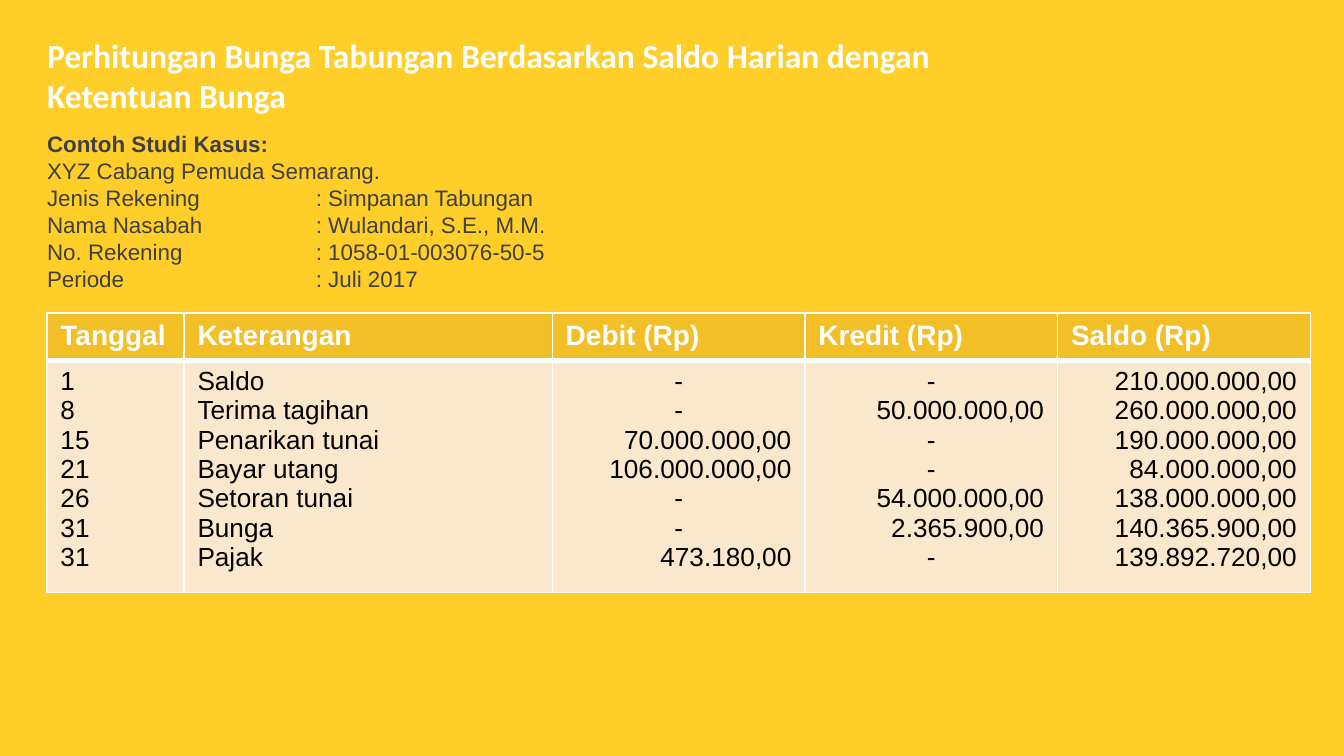
import pptx
import pptx.util
import pptx.dml.color
import pptx.enum.text
import pptx.oxml.ns
import lxml.etree

Inches, Pt = pptx.util.Inches, pptx.util.Pt
ALIGN = pptx.enum.text.PP_ALIGN
ANCHOR = pptx.enum.text.MSO_ANCHOR
SIZE = pptx.enum.text.MSO_AUTO_SIZE
COLORS = {"back": "FFCE29", "white": "FFFFFF", "gray": "404040",
          "black": "000000", "head": "F2BF27", "cell": "FAE8CD"}
TITLE = "Perhitungan Bunga Tabungan Berdasarkan Saldo Harian dengan Ketentuan Bunga"
CASE = ["Contoh Studi Kasus:", "XYZ Cabang Pemuda Semarang.",
        "Jenis Rekening\t: Simpanan Tabungan",
        "Nama Nasabah\t: Wulandari, S.E., M.M.",
        "No. Rekening\t: 1058-01-003076-50-5", "Periode\t\t: Juli 2017"]
HEADS = ["Tanggal", "Keterangan", "Debit (Rp)", "Kredit (Rp)", "Saldo (Rp)"]
ROWS = [
    ("1", "Saldo", "-", "-", "210.000.000,00"),
    ("8", "Terima tagihan", "-", "50.000.000,00", "260.000.000,00"),
    ("15", "Penarikan tunai", "70.000.000,00", "-", "190.000.000,00"),
    ("21", "Bayar utang", "106.000.000,00", "-", "84.000.000,00"),
    ("26", "Setoran tunai", "-", "54.000.000,00", "138.000.000,00"),
    ("31", "Bunga", "-", "2.365.900,00", "140.365.900,00"),
    ("31", "Pajak", "473.180,00", "-", "139.892.720,00"),
]
WIDTHS = [1.02, 2.74, 1.88, 1.88, 1.88]
HEIGHTS = [0.35, 1.73]


def color(name):
    return pptx.dml.color.RGBColor.from_string(COLORS[name])


def node(parent, tag, **attrs):
    return lxml.etree.SubElement(parent, pptx.oxml.ns.qn(tag), attrs)


def write(frame, index, text, size=12, font="Arial", ink="gray", bold=False,
          align=ALIGN.LEFT, line=None):
    """Fill paragraph number index of the frame, adding it if needed."""
    para = frame.paragraphs[0] if index == 0 else frame.add_paragraph()
    para.alignment = align
    para.space_before = Pt(0)
    if line:
        para.line_spacing = Pt(line)
    run = para.add_run()
    run.text = text
    run.font.size, run.font.name, run.font.bold = Pt(size), font, bold
    run.font.color.rgb = color(ink)
    return para


def place(shape, left, top, width, height):
    shape.left, shape.top = Inches(left), Inches(top)
    shape.width, shape.height = Inches(width), Inches(height)
    frame = shape.text_frame
    frame.word_wrap = True
    frame.auto_size = SIZE.NONE
    frame.vertical_anchor = ANCHOR.TOP
    return frame


def add_case(frame):
    """Write the case lines without bullets, with tabs one inch apart."""
    for i, text in enumerate(CASE):
        para = write(frame, i, text, bold=i == 0, line=14.45)
        props = para._p.get_or_add_pPr()
        props.set("marL", "0")
        props.set("indent", "0")
        props.set("defTabSz", str(Inches(1)))
        node(props, "a:buNone")


def paint(cell, fill, top, bottom):
    """Give the cell white borders, then its fill."""
    props = cell._tc.get_or_add_tcPr()
    for edge, width in (("L", 1), ("R", 1), ("T", top), ("B", bottom)):
        line = node(props, "a:ln" + edge, w=str(Pt(width)))
        node(node(line, "a:solidFill"), "a:srgbClr", val=COLORS["white"])
    cell.fill.solid()
    cell.fill.fore_color.rgb = color(fill)


def side(text, col):
    if col < 2:
        return ALIGN.LEFT
    return ALIGN.CENTER if text == "-" else ALIGN.RIGHT


def add_ledger(slide):
    table = slide.shapes.add_table(
        2, len(HEADS), Inches(0.35), Inches(2.33),
        Inches(sum(WIDTHS)), Inches(sum(HEIGHTS))).table
    for row, height in zip(table.rows, HEIGHTS):
        row.height = Inches(height)
    for col, (head, width) in enumerate(zip(HEADS, WIDTHS)):
        table.columns[col].width = Inches(width)
        top, body = table.cell(0, col), table.cell(1, col)
        paint(top, "head", 1, 3)
        paint(body, "cell", 3, 1)
        write(top.text_frame, 0, head, size=15, ink="white", bold=True)
        for i, row in enumerate(ROWS):
            write(body.text_frame, i, row[col], size=14, ink="black",
                  align=side(row[col], col), line=15.7)


def main():
    deck = pptx.Presentation()
    deck.slide_width = Inches(10)
    deck.slide_height = deck.slide_width * 9 // 16
    slide = deck.slides.add_slide(deck.slide_layouts[1])
    slide.background.fill.solid()
    slide.background.fill.fore_color.rgb = color("back")
    title = place(slide.shapes.title, 0.25, 0.21, 7.83, 0.71)
    write(title, 0, TITLE, size=18, font="Calibri", ink="white", bold=True)
    add_case(place(slide.placeholders[1], 0.25, 0.92, 9.64, 1.72))
    add_ledger(slide)
    deck.save("out.pptx")


if __name__ == "__main__":
    main()
